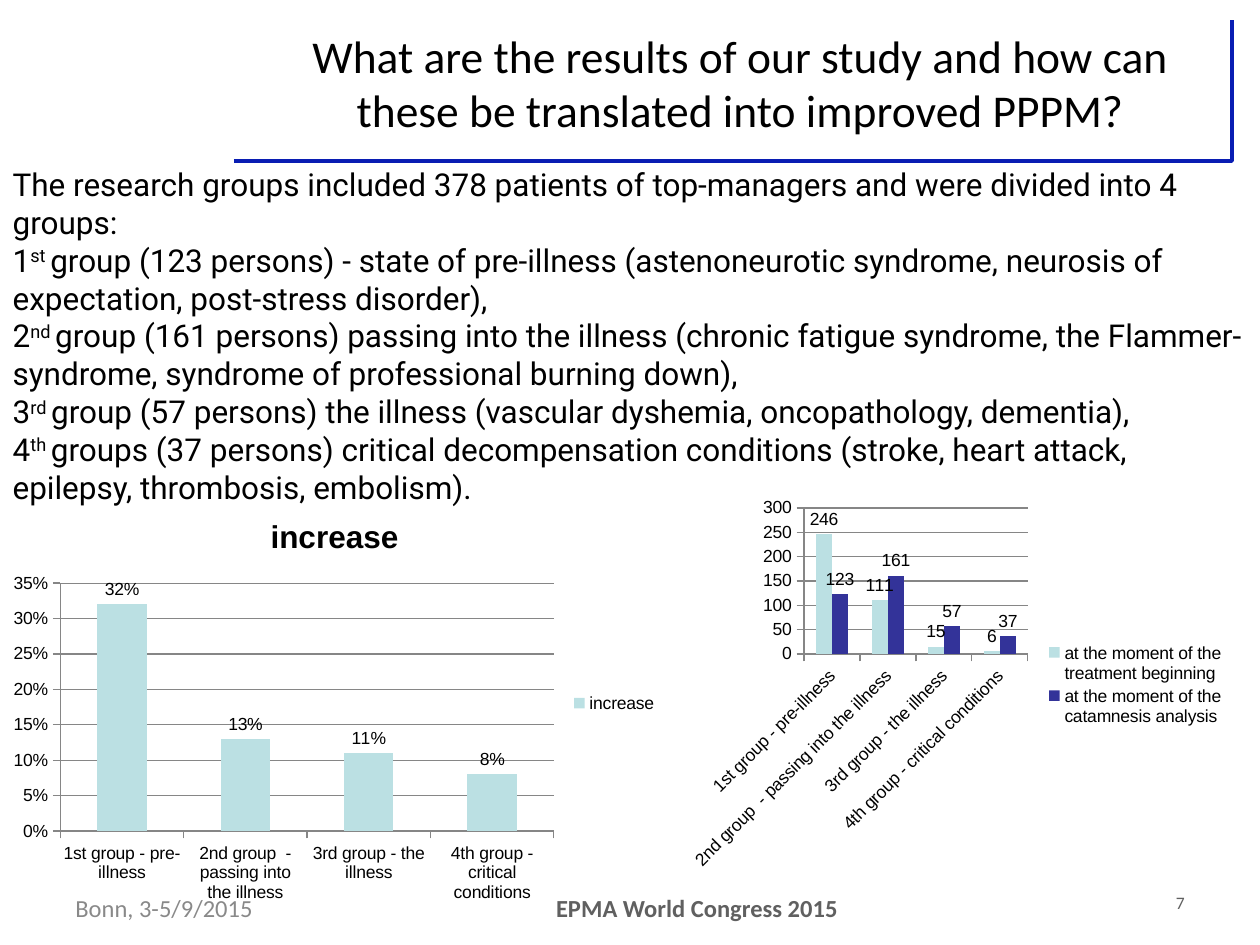
from lxml import etree
from pptx import Presentation
from pptx.chart.data import CategoryChartData
from pptx.dml.color import RGBColor
from pptx.enum.chart import XL_CHART_TYPE, XL_LABEL_POSITION, XL_LEGEND_POSITION, XL_TICK_MARK
from pptx.enum.text import MSO_ANCHOR, MSO_AUTO_SIZE, PP_ALIGN
from pptx.oxml.ns import qn
from pptx.util import Pt

PX = 914400 / 126
LEFT, MID, RIGHT = PP_ALIGN.LEFT, PP_ALIGN.CENTER, PP_ALIGN.RIGHT
COLUMN = XL_CHART_TYPE.COLUMN_CLUSTERED
ABOVE = XL_LABEL_POSITION.OUTSIDE_END
ASIDE = XL_LEGEND_POSITION.RIGHT
OUT = XL_TICK_MARK.OUTSIDE

CATS = ["1st group - pre-illness", "2nd group  - passing into the illness",
        "3rd group - the illness", "4th group - critical conditions"]
INTRO = ("The research groups included 378 patients of top-managers "
         "and were divided into 4 groups:")
GROUPS = [
    ("1", "st ", "group (123 persons) - state of pre-illness (astenoneurotic "
     "syndrome, neurosis of expectation, post-stress disorder),"),
    ("2", "nd ", "group (161 persons) passing into the illness (chronic fatigue "
     "syndrome, the Flammer-syndrome, syndrome of professional burning down),"),
    ("3", "rd ", "group (57 persons) the illness (vascular dyshemia, "
     "oncopathology, dementia),"),
    ("4", "th ", "groups (37 persons) critical decompensation conditions "
     "(stroke, heart attack, epilepsy, thrombosis, embolism)."),
]


def px(n):
    return round(n * PX)


def color(code):
    return RGBColor.from_string(code)


def style(font, name, size, code, bold=False):
    font.name, font.size, font.bold = name, Pt(size), bold
    font.color.rgb = color(code)


def place(shape, box):
    shape.left, shape.top, shape.width, shape.height = map(px, box)


def add_text(slide, box, text, size, code, align=LEFT, bold=False):
    frame = slide.shapes.add_textbox(*map(px, box)).text_frame
    frame.word_wrap = True
    para = frame.paragraphs[0]
    para.text, para.alignment = text, align
    style(para.font, "Calibri", size, code, bold)


def add_rule(slide):
    path = slide.shapes.build_freeform(234, 161, scale=PX)
    path.add_line_segments([(1232, 161), (1232, 20)], close=False)
    rule = path.convert_to_shape()
    rule.shadow.inherit = False
    rule.fill.background()
    rule.line.color.rgb, rule.line.width = color("091DB3"), Pt(2.25)


def fill_title(shape, text):
    place(shape, (271, 18, 939, 129))
    frame = shape.text_frame
    frame.text = text
    frame.auto_size, frame.vertical_anchor = MSO_AUTO_SIZE.NONE, MSO_ANCHOR.MIDDLE
    para = frame.paragraphs[0]
    para.alignment = MID
    style(para.font, "Calibri", 26, "000000")


def fill_body(shape):
    place(shape, (0, 159, 1260, 624))
    frame = shape.text_frame
    frame.auto_size = MSO_AUTO_SIZE.NONE
    frame.text = INTRO
    for group in GROUPS:
        para = frame.add_paragraph()
        runs = [para.add_run() for _ in group]
        for run, text in zip(runs, group):
            run.text = text
        runs[1]._r.get_or_add_rPr().set("baseline", "30000")
    for para in frame.paragraphs:
        props = para._p.get_or_add_pPr()
        props.set("marL", "0")
        props.set("indent", "0")
        para.space_before = Pt(0)
        etree.SubElement(props, qn("a:buNone"))
        style(para.font, "Roboto", 18, "000000")


def fix_part(part, index, box, outer, inner=False):
    """Pin a chart part to a slide box, as shares of the chart's own box."""
    for old in part.findall(qn("c:layout")):
        part.remove(old)
    layout = etree.Element(qn("c:layout"))
    part.insert(index, layout)
    manual = etree.SubElement(layout, qn("c:manualLayout"))
    rows = [("layoutTarget", "inner")] if inner else []
    rows += [("xMode", "edge"), ("yMode", "edge")]
    x, y, w, h = box
    left, top, wide, high = outer
    shares = ((x - left) / wide, (y - top) / high, w / wide, h / high)
    rows += [(tag, f"{share:.3f}") for tag, share in zip("xywh", shares)]
    for tag, val in rows:
        etree.SubElement(manual, qn("c:" + tag)).set("val", val)


def add_chart(slide, box, plot_box, key_box, series, top, step,
              fmt="General", title=None, turn=None):
    data = CategoryChartData(number_format=fmt)
    data.categories = CATS
    for name, vals, _ in series:
        data.add_series(name, vals)
    chart = slide.shapes.add_chart(COLUMN, *map(px, box), data).chart
    style(chart.font, "Arial", 10, "000000")

    # Title and legend
    chart.has_title = title is not None
    if title:
        chart.chart_title.text_frame.text = title
        style(chart.chart_title.text_frame.paragraphs[0].font,
              "Arial", 18, "000000", True)
    chart.has_legend = True
    chart.legend.position = ASIDE
    chart.legend.include_in_layout = False

    # Axes
    for axis in (chart.category_axis, chart.value_axis):
        axis.major_tick_mark = OUT
        axis.format.line.color.rgb = color("868686")
    scale = chart.value_axis
    scale.minimum_scale, scale.maximum_scale, scale.major_unit = 0, top, step
    scale.major_gridlines.format.line.color.rgb = color("868686")
    scale.tick_labels.number_format = fmt
    scale.tick_labels.number_format_is_linked = False
    if turn:
        chart.category_axis.tick_labels.font.size = Pt(10)
        body = chart.category_axis._element.find(qn("c:txPr")).find(qn("a:bodyPr"))
        body.set("rot", str(turn * 60000))

    # Columns and labels
    plot = chart.plots[0]
    plot.gap_width, plot.overlap, plot.vary_by_categories = 150, 0, False
    for bars, (_, _, code) in zip(plot.series, series):
        bars.format.fill.solid()
        bars.format.fill.fore_color.rgb = color(code)
        labels = bars.data_labels
        labels.show_value, labels.position = True, ABOVE
        labels.number_format, labels.number_format_is_linked = fmt, False

    area = chart._chartSpace.chart.plotArea
    fix_part(area, 0, plot_box, box, inner=True)
    fix_part(chart.legend._element, 1, key_box, box)


def main():
    deck = Presentation()
    deck.slide_width, deck.slide_height = px(1260), px(945)
    slide = deck.slides.add_slide(deck.slide_layouts[1])

    # Heading and findings
    add_rule(slide)
    fill_title(slide.shapes.title, "What are the results of our study and how can "
               "these be translated into improved PPPM?")
    fill_body(slide.placeholders[1])

    # Footer
    add_text(slide, (945, 886, 252, 38), "7", 10, "606060", RIGHT)
    add_text(slide, (63, 887, 397, 39), "Bonn, 3-5/9/2015", 14, "898989")
    add_text(slide, (476, 887, 442, 39), "EPMA World Congress 2015", 14,
             "606060", MID, True)

    # Charts
    add_chart(slide, (0, 495, 669, 416), (60, 583, 494, 248), (568, 692, 92, 22),
              [("increase", (0.32, 0.13, 0.11, 0.08), "BBE0E3")],
              0.35, 0.05, fmt="0%", title="increase")
    add_chart(slide, (680, 491, 554, 387), (804, 508, 224, 146), (1040, 640, 190, 90),
              [("at the moment of the treatment beginning", (246, 111, 15, 6), "BBE0E3"),
               ("at the moment of the catamnesis analysis", (123, 161, 57, 37), "333399")],
              300, 50, turn=-45)

    deck.save("out.pptx")


if __name__ == "__main__":
    main()
